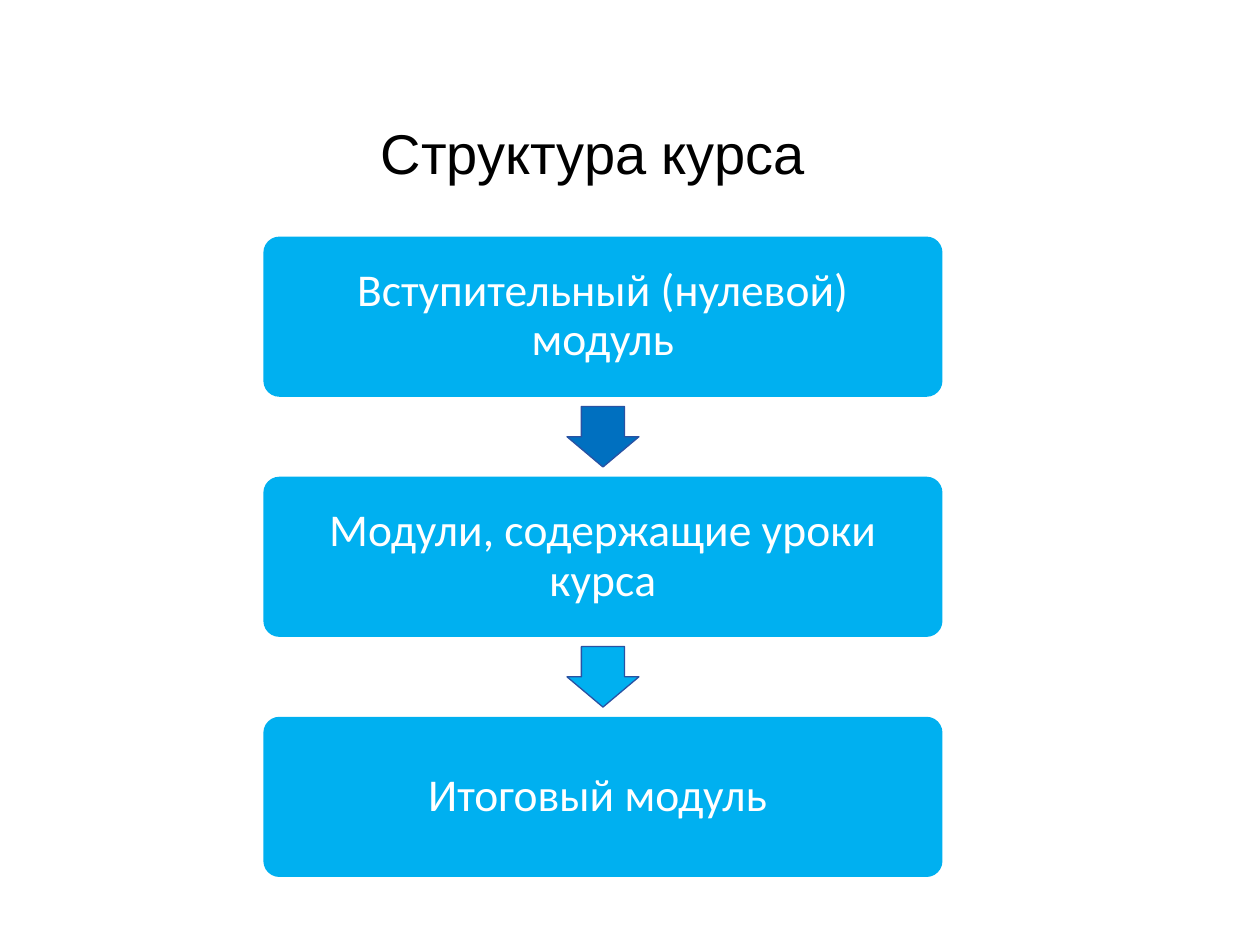
from pptx import Presentation
from pptx.dml.color import RGBColor
from pptx.enum.shapes import MSO_SHAPE
from pptx.enum.text import MSO_ANCHOR, PP_ALIGN
from pptx.util import Cm, Pt

ROUNDED = MSO_SHAPE.ROUNDED_RECTANGLE
ARROW = MSO_SHAPE.RIGHT_ARROW
MIDDLE = MSO_ANCHOR.MIDDLE
LEFT, CENTER = PP_ALIGN.LEFT, PP_ALIGN.CENTER
TITLE_ONLY = 5

SKY, BLUE, OUTLINE = "00B0F0", "0070C0", "2952A3"
BLACK, WHITE = "000000", "FFFFFF"

MODULES = [
    "Вступительный (нулевой) модуль",
    "Модули, содержащие уроки курса",
    "Итоговый модуль ",
]
ARROW_FILLS = [BLUE, SKY]

# Column of modules, in centimetres
MODULE_LEFT, MODULE_TOP = 5.31, 4.77
MODULE_WIDTH, MODULE_HEIGHT = 13.69, 3.23
GAP = 1.61
ARROW_LENGTH, ARROW_SPAN = 1.22, 1.45


def color(hex_value):
    return RGBColor.from_string(hex_value)


def write(shape, text, size, font, hex_value, align):
    frame = shape.text_frame
    frame.word_wrap = True
    frame.vertical_anchor = MIDDLE
    paragraph = frame.paragraphs[0]
    paragraph.text = text
    paragraph.alignment = align
    paragraph.line_spacing = 0.9
    paragraph.font.size = Pt(size)
    paragraph.font.name = font
    paragraph.font.color.rgb = color(hex_value)


def add_title(slide, text):
    title = slide.shapes.title
    title.left, title.top = Cm(7.42), Cm(2.13)
    title.width, title.height = Cm(10.87), Cm(2.03)
    write(title, text, 32, "Arial", BLACK, LEFT)


def add_filled(slide, kind, left, top, width, height, fill):
    shape = slide.shapes.add_shape(kind, Cm(left), Cm(top), Cm(width), Cm(height))
    shape.shadow.inherit = False
    shape.fill.solid()
    shape.fill.fore_color.rgb = color(fill)
    return shape


def add_module(slide, top, text):
    module = add_filled(slide, ROUNDED, MODULE_LEFT, top,
                        MODULE_WIDTH, MODULE_HEIGHT, SKY)
    module.adjustments[0] = 0.1
    module.line.fill.background()
    frame = module.text_frame
    frame.margin_left = frame.margin_right = Cm(0.28)
    frame.margin_top = frame.margin_bottom = Cm(0.28)
    write(module, text, 26, "Calibri", WHITE, CENTER)


def add_down_arrow(slide, center_y, fill):
    center_x = MODULE_LEFT + MODULE_WIDTH / 2
    arrow = add_filled(slide, ARROW, center_x - ARROW_LENGTH / 2,
                       center_y - ARROW_SPAN / 2, ARROW_LENGTH, ARROW_SPAN, fill)
    arrow.rotation = 90
    arrow.adjustments[0] = 0.6
    arrow.adjustments[1] = 0.5
    arrow.line.color.rgb = color(OUTLINE)
    arrow.line.width = Pt(0.75)


def main():
    presentation = Presentation()
    presentation.slide_width, presentation.slide_height = Cm(25.4), Cm(19.05)
    slide = presentation.slides.add_slide(presentation.slide_layouts[TITLE_ONLY])
    add_title(slide, "Структура курса")

    # Modules from top to bottom, with an arrow in each gap
    for index, text in enumerate(MODULES):
        top = MODULE_TOP + index * (MODULE_HEIGHT + GAP)
        add_module(slide, top, text)
        if index < len(ARROW_FILLS):
            add_down_arrow(slide, top + MODULE_HEIGHT + GAP / 2, ARROW_FILLS[index])

    presentation.save("out.pptx")


if __name__ == "__main__":
    main()
